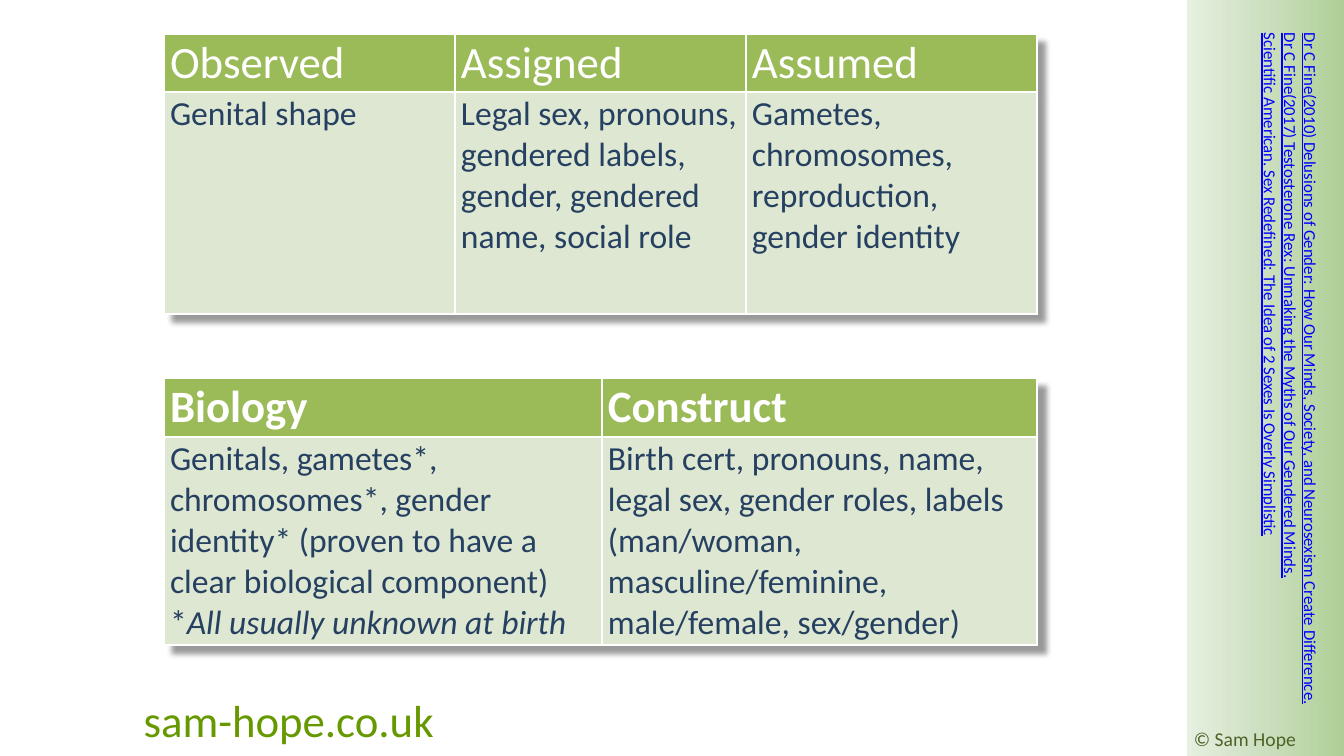
from lxml.etree import SubElement
from pptx import Presentation
from pptx.dml.color import RGBColor
from pptx.enum.shapes import MSO_SHAPE
from pptx.enum.text import MSO_AUTO_SIZE, PP_ALIGN
from pptx.oxml import parse_xml
from pptx.oxml.ns import nsdecls, qn
from pptx.util import Emu, Pt

EMU_PER_PX = 914400 / 100.8
FONT = "Calibri"
WHITE = RGBColor(0xFF, 0xFF, 0xFF)
HEADER_GREEN = RGBColor(0x9B, 0xBB, 0x59)
CELL_GREEN = RGBColor(0xDE, 0xE7, 0xD1)
NAVY = RGBColor(0x25, 0x40, 0x61)
SITE_GREEN = RGBColor(0x66, 0x99, 0x00)
DARK_GREEN = RGBColor(0x4F, 0x62, 0x28)
LINK_BLUE = RGBColor(0x00, 0x00, 0xFF)
SIDEBAR_STOPS = [(0, "ADCF95"), (50, "CCDFBF"), (100, "E6EFE0")]

REFERENCES = [
    "Dr C Fine(2010) Delusions of Gender: How Our Minds, Society, and Neurosexism Create Difference.",
    "Dr C Fine(2017) Testosterone Rex: Unmaking the Myths of Our Gendered Minds.",
    "Scientific American. Sex Redefined: The Idea of 2 Sexes Is Overly Simplistic",
]
BIRTH_ROWS = [
    ["Observed", "Assigned", "Assumed"],
    [
        "Genital shape",
        "Legal sex, pronouns, gendered labels, gender, gendered name, social role",
        "Gametes, chromosomes, reproduction, gender identity",
    ],
]
BIOLOGY_ROWS = [
    ["Biology", "Construct"],
    [
        [
            "Genitals, gametes*, chromosomes*, gender identity* "
            "(proven to have a clear biological component)",
            [("*", False), ("All usually unknown at birth", True)],
        ],
        "Birth cert, pronouns, name, legal sex, gender roles, labels "
        "(man/woman, masculine/feminine, male/female, sex/gender)",
    ],
]


def px(length):
    return Emu(round(length * EMU_PER_PX))


def write(frame, content, size, color, bold=False, underline=False, align=PP_ALIGN.LEFT):
    paragraphs = [content] if isinstance(content, str) else content
    for index, spans in enumerate(paragraphs):
        para = frame.add_paragraph() if index else frame.paragraphs[0]
        para.alignment = align
        for text, italic in [(spans, False)] if isinstance(spans, str) else spans:
            span = para.add_run()
            span.text = text
            font = span.font
            font.name = FONT
            font.size = Pt(size)
            font.bold = bold
            font.italic = italic
            font.underline = underline
            font.color.rgb = color


def add_text(page, left, top, width, height, content, vertical=False, **text_format):
    box = page.shapes.add_textbox(px(left), px(top), px(width), px(height))
    frame = box.text_frame
    frame.word_wrap = True
    frame.auto_size = MSO_AUTO_SIZE.SHAPE_TO_FIT_TEXT
    if vertical:
        frame._txBody.bodyPr.set("vert", "vert")
    write(frame, content, **text_format)


def add_rectangle(page, left, top, width, height):
    box = page.shapes.add_shape(
        MSO_SHAPE.RECTANGLE, px(left), px(top), px(width), px(height)
    )
    box.shadow.inherit = False
    return box


def add_sidebar(page):
    sidebar = add_rectangle(page, 1187, 0, 157, 756)
    sidebar.line.fill.background()
    sidebar.fill.gradient()
    sidebar.fill.gradient_angle = 180
    stops = sidebar._element.spPr.find(qn("a:gradFill")).find(qn("a:gsLst"))
    for stop in list(stops):
        stops.remove(stop)
    for percent, color in SIDEBAR_STOPS:
        stop = SubElement(stops, qn("a:gs"), pos=str(percent * 1000))
        SubElement(stop, qn("a:srgbClr"), val=color)


def add_panel(page):
    panel = add_rectangle(page, 8, 42, 1167, 607)
    panel.fill.solid()
    panel.fill.fore_color.rgb = WHITE
    panel.line.color.rgb = WHITE
    panel.line.width = Pt(2)


def border_cell(cell):
    properties = cell._tc.get_or_add_tcPr()
    for index, side in enumerate(("lnL", "lnR", "lnT", "lnB")):
        properties.insert(index, parse_xml(
            f'<a:{side} {nsdecls("a")} w="12700"><a:solidFill>'
            f'<a:srgbClr val="{WHITE}"/></a:solidFill></a:{side}>'
        ))


def add_table_shadow(table):
    table._tbl.tblPr.insert(0, parse_xml(
        f'<a:effectLst {nsdecls("a")}><a:outerShdw blurRad="50800" dist="101600" '
        'dir="2700000" algn="tl" rotWithShape="0"><a:srgbClr val="000000">'
        '<a:alpha val="40000"/></a:srgbClr></a:outerShdw></a:effectLst>'
    ))


def add_grid(page, top, widths, heights, rows, bold_header):
    table = page.shapes.add_table(
        len(heights), len(widths), px(164), px(top), px(sum(widths)), px(sum(heights))
    ).table
    table.horz_banding = False
    add_table_shadow(table)
    for column, width in zip(table.columns, widths):
        column.width = px(width)
    for row_index, contents in enumerate(rows):
        table.rows[row_index].height = px(heights[row_index])
        header = row_index == 0
        for column_index, content in enumerate(contents):
            cell = table.cell(row_index, column_index)
            cell.margin_left = cell.margin_right = px(6)
            cell.margin_top = cell.margin_bottom = px(2)
            cell.fill.solid()
            cell.fill.fore_color.rgb = HEADER_GREEN if header else CELL_GREEN
            border_cell(cell)
            write(
                cell.text_frame,
                content,
                size=32 if header else 24,
                color=WHITE if header else NAVY,
                bold=header and bold_header,
            )


def main():
    deck = Presentation()
    deck.slide_width = px(1344)
    deck.slide_height = px(756)
    page = deck.slides.add_slide(deck.slide_layouts[6])

    add_sidebar(page)
    add_panel(page)
    add_text(page, 4, 688, 440, 95, "sam-hope.co.uk",
             size=32, color=SITE_GREEN, align=PP_ALIGN.RIGHT)
    add_text(page, 1184, 722, 212, 34, "© Sam Hope", size=14, color=DARK_GREEN)
    add_grid(page, 34, [291, 291, 291], [58, 222], BIRTH_ROWS, bold_header=False)
    add_grid(page, 378, [438, 435], [59, 208], BIOLOGY_ROWS, bold_header=True)
    add_text(page, 1244, 23, 82, 733, REFERENCES, vertical=True,
             size=12, color=LINK_BLUE, underline=True)
    deck.save("out.pptx")


if __name__ == "__main__":
    main()
